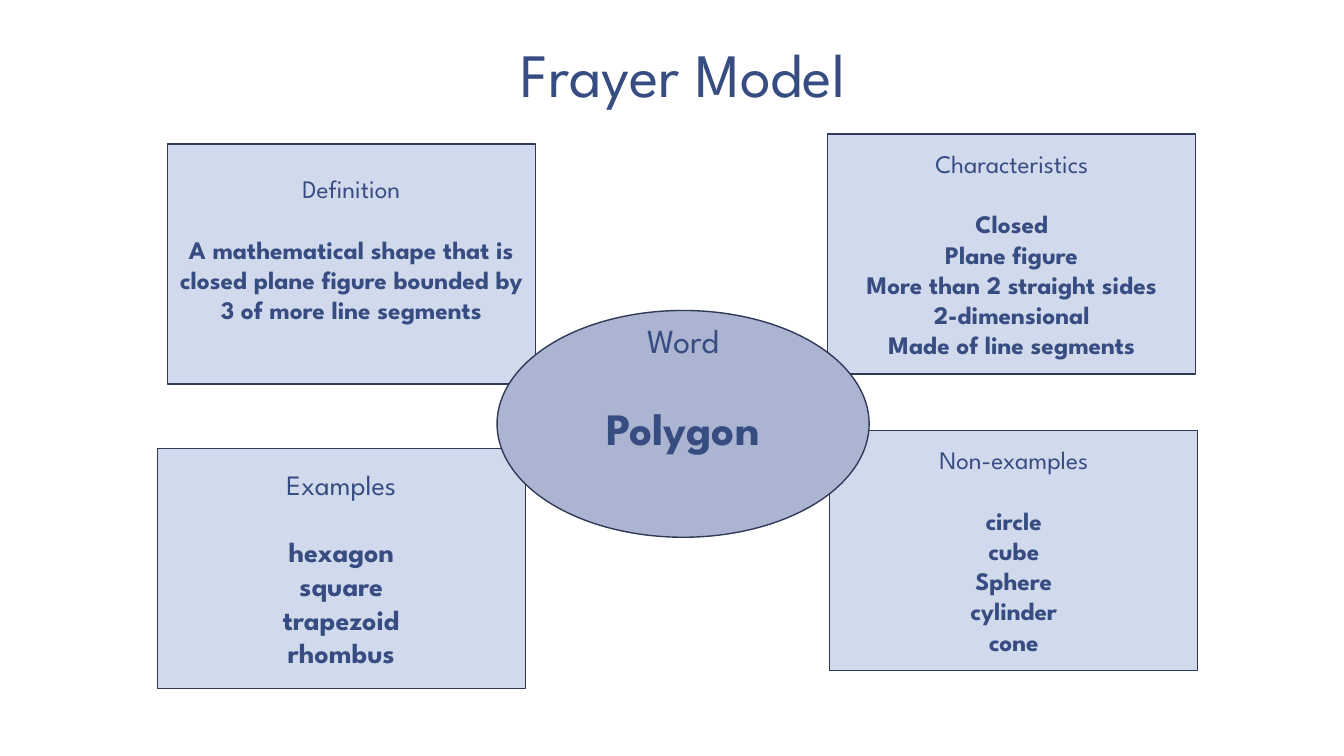
from dataclasses import dataclass

from pptx import Presentation
from pptx.dml.color import RGBColor
from pptx.enum.shapes import MSO_SHAPE
from pptx.enum.text import MSO_ANCHOR, PP_ALIGN
from pptx.util import Inches, Pt


@dataclass(frozen=True)
class Theme:
    font: str = "League Spartan"
    ink: RGBColor = RGBColor(0x37, 0x4C, 0x81)
    outline: RGBColor = RGBColor(0x30, 0x3A, 0x58)
    panel: RGBColor = RGBColor(0xD1, 0xD9, 0xEC)
    oval: RGBColor = RGBColor(0xAB, 0xB4, 0xD1)
    title_size: int = 44
    word_label_size: int = 24
    word_size: int = 32
    panel_size: int = 18
    examples_size: int = 20
    line_height: float = 1.2


THEME = Theme()
PANEL_WIDTH, PANEL_HEIGHT = 3.65, 2.38


def write_line(paragraph, text, size, bold=False):
    paragraph.alignment = PP_ALIGN.CENTER
    run = paragraph.add_run()
    run.text = text
    run.font.name = THEME.font
    run.font.size = Pt(size)
    run.font.bold = bold
    run.font.color.rgb = THEME.ink


def add_title(slide, box, text):
    frame = slide.shapes.add_textbox(*map(Inches, box)).text_frame
    frame.word_wrap = True
    frame.vertical_anchor = MSO_ANCHOR.BOTTOM
    frame.margin_left = frame.margin_right = Inches(0.13)
    frame.margin_top = frame.margin_bottom = Inches(0.07)
    paragraph = frame.paragraphs[0]
    paragraph.line_spacing = 0.85
    write_line(paragraph, text, THEME.title_size)


def add_labelled_shape(slide, kind, box, fill, label, label_size, lines, line_size, lift=0):
    """Place a label, a one-line gap and bold lines; lift raises the text's lower limit."""
    shape = slide.shapes.add_shape(kind, *map(Inches, box))
    shape.shadow.inherit = False
    shape.fill.solid()
    shape.fill.fore_color.rgb = fill
    shape.line.color.rgb = THEME.outline
    shape.line.width = Pt(1)
    frame = shape.text_frame
    frame.word_wrap = True
    frame.vertical_anchor = MSO_ANCHOR.MIDDLE
    frame.margin_bottom = Inches(0.05 + lift)
    heading = frame.paragraphs[0]
    heading.space_after = Pt(label_size * THEME.line_height)
    write_line(heading, label, label_size)
    for line in lines:
        write_line(frame.add_paragraph(), line, line_size, bold=True)


def add_panel(slide, left, top, label, lines, size=THEME.panel_size, lift=0):
    box = (left, top, PANEL_WIDTH, PANEL_HEIGHT)
    add_labelled_shape(slide, MSO_SHAPE.RECTANGLE, box, THEME.panel,
                       label, size, lines, size, lift)


def add_word_oval(slide, box, label, word):
    add_labelled_shape(slide, MSO_SHAPE.OVAL, box, THEME.oval, label,
                       THEME.word_label_size, [word], THEME.word_size, lift=0.73)


def build_frayer_slide(presentation):
    slide = presentation.slides.add_slide(presentation.slide_layouts[6])
    add_title(slide, (1.22, 0.08, 11.11, 1.08), "Frayer Model")
    add_panel(slide, 1.56, 4.45, "Examples",
              ["hexagon", "square", "trapezoid", "rhombus"], THEME.examples_size)
    add_panel(slide, 8.23, 4.27, "Non-examples",
              ["circle", "cube", "Sphere", "cylinder", "cone"])
    add_panel(slide, 8.21, 1.33, "Characteristics",
              ["Closed", "Plane figure", "More than 2 straight sides",
               "2-dimensional", "Made of line segments"])
    add_panel(slide, 1.66, 1.43, "Definition",
              ["A mathematical shape that is closed plane figure bounded by "
               "3 of more line segments"], lift=0.3)
    add_word_oval(slide, (4.93, 3.08, 3.69, 2.25), "Word", "Polygon")


def main():
    presentation = Presentation()
    presentation.slide_width = Inches(13.33)
    presentation.slide_height = Inches(7.5)
    build_frayer_slide(presentation)
    presentation.save("out.pptx")


if __name__ == "__main__":
    main()
